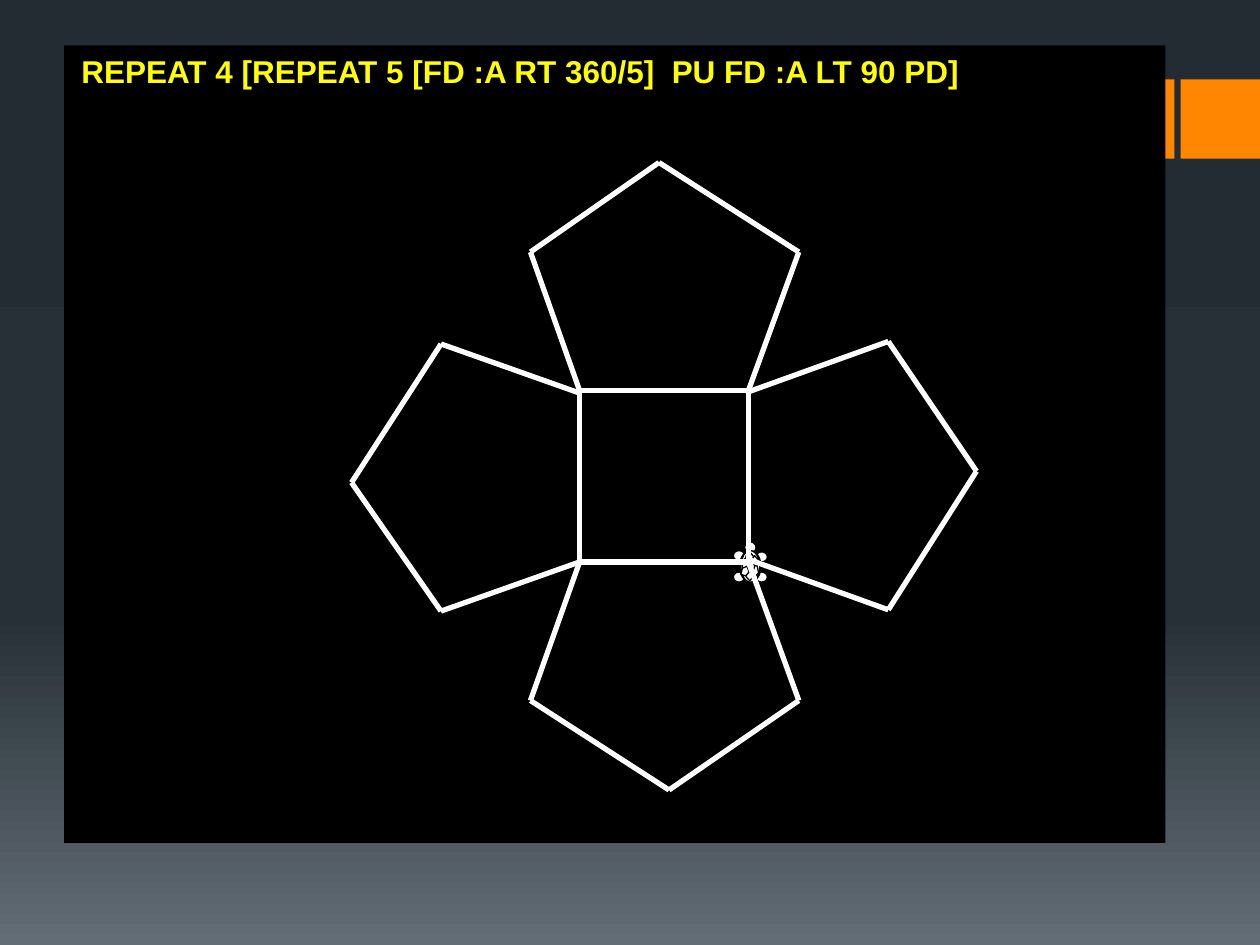
from copy import deepcopy

from pptx import Presentation
from pptx.dml.color import RGBColor
from pptx.enum.shapes import MSO_CONNECTOR, MSO_SHAPE
from pptx.enum.text import MSO_ANCHOR, MSO_AUTO_SIZE, PP_ALIGN
from pptx.oxml.ns import qn
from pptx.util import Pt
from lxml import etree

PX = 9144  # 100 px to the inch
RECTANGLE, ELLIPSE = MSO_SHAPE.RECTANGLE, MSO_SHAPE.OVAL
PENTAGON, HEXAGON = MSO_SHAPE.REGULAR_PENTAGON, MSO_SHAPE.HEXAGON
STRAIGHT = MSO_CONNECTOR.STRAIGHT
TITLE_ONLY = 5
BLACK, WHITE, ORANGE, YELLOW = "000000", "FFFFFF", "FF8600", "FFFF00"


def color(hex_string):
    return RGBColor.from_string(hex_string)


def add_filled(shapes, kind, box, fill, outline=None, rotation=0):
    """Add a preset shape; box is left, top, width, height in px."""
    shape = shapes.add_shape(kind, *(value * PX for value in box))
    shape.shadow.inherit = False
    shape.rotation = rotation
    shape.fill.solid()
    shape.fill.fore_color.rgb = color(fill)
    if outline:
        shape.line.color.rgb = color(outline)
        shape.line.width = Pt(0.75)
    else:
        shape.line.fill.background()


presentation = Presentation()
presentation.slide_width = 1000 * PX
presentation.slide_height = 750 * PX
slide = presentation.slides.add_slide(presentation.slide_layouts[TITLE_ONLY])

# Background gradient, dark at the top
background = slide.background.fill
background.gradient()
background.gradient_angle = 270
stop_list = slide._element.find(".//" + qn("a:gsLst"))
stop_list.insert(1, deepcopy(stop_list[0]))
gradient = [(0, "242C33"), (0.65, "273037"), (1, "636D76")]
for stop, (position, shade) in zip(background.gradient_stops, gradient):
    stop.position = position
    stop.color.rgb = color(shade)

# Orange bars and the black drawing board
for box, fill in [
    ((923, 63, 9, 63), ORANGE),
    ((937, 63, 63, 63), ORANGE),
    ((51, 36, 874, 633), BLACK),
]:
    add_filled(slide.shapes, RECTANGLE, box, fill)

# Turtle: head, feet, body, then the plates of its shell
turtle = slide.shapes.add_group_shape()
feet = [(left, top, 9, 8) for left, top in [(582, 437), (600, 438), (600, 454), (582, 454)]]
for box in [(591, 430, 9, 9), *feet]:
    add_filled(turtle.shapes, ELLIPSE, box, WHITE, BLACK)
add_filled(turtle.shapes, ELLIPSE, (587, 437, 17, 25), BLACK, BLACK)
add_filled(turtle.shapes, ELLIPSE, (588, 437, 15, 25), WHITE, BLACK)
for kind, box, rotation in [
    (PENTAGON, (589, 442, 6, 9), 11.4),
    (PENTAGON, (592, 452, 6, 9), 180),
    (PENTAGON, (587, 450, 9, 6), 311.2),
    (PENTAGON, (596, 441, 6, 9), 0),
    (PENTAGON, (592, 438, 6, 9), 0),
    (PENTAGON, (596, 449, 6, 9), 180),
    (HEXAGON, (593, 445, 6, 9), 0),
]:
    add_filled(turtle.shapes, kind, box, WHITE, BLACK, rotation)

# Four pentagons around a square, each closed back to its first corner
pentagons = [
    [(460, 446), (594, 446), (634, 556), (531, 627), (421, 556)],
    [(594, 444), (594, 311), (705, 271), (775, 374), (705, 484)],
    [(460, 312), (460, 446), (350, 485), (279, 383), (350, 273)],
    [(594, 310), (460, 310), (421, 200), (523, 129), (634, 200)],
]
for corners in pentagons:
    for start, end in zip(corners, corners[1:] + corners[:1]):
        side = slide.shapes.add_connector(STRAIGHT, *(value * PX for value in start + end))
        side.line.color.rgb = color(WHITE)
        side.line.width = Pt(3)
        etree.SubElement(side._element.spPr, qn("a:effectLst"))

# Command shown as the title, in front of the board
title = slide.shapes.title
slide.shapes._spTree.append(title._element)
for name, value in {"left": 51, "top": 36, "width": 724, "height": 40}.items():
    setattr(title, name, value * PX)
frame = title.text_frame
frame.text = "REPEAT 4 [REPEAT 5 [FD :A RT 360/5]  PU FD :A LT 90 PD]"
frame_format = {
    "word_wrap": False,
    "auto_size": MSO_AUTO_SIZE.SHAPE_TO_FIT_TEXT,
    "vertical_anchor": MSO_ANCHOR.TOP,
}
for name, value in frame_format.items():
    setattr(frame, name, value)
paragraph = frame.paragraphs[0]
paragraph.alignment = PP_ALIGN.CENTER
font = paragraph.runs[0].font
for name, value in {"name": "Arial", "size": Pt(18), "bold": True}.items():
    setattr(font, name, value)
font.color.rgb = color(YELLOW)

presentation.save("out.pptx")
